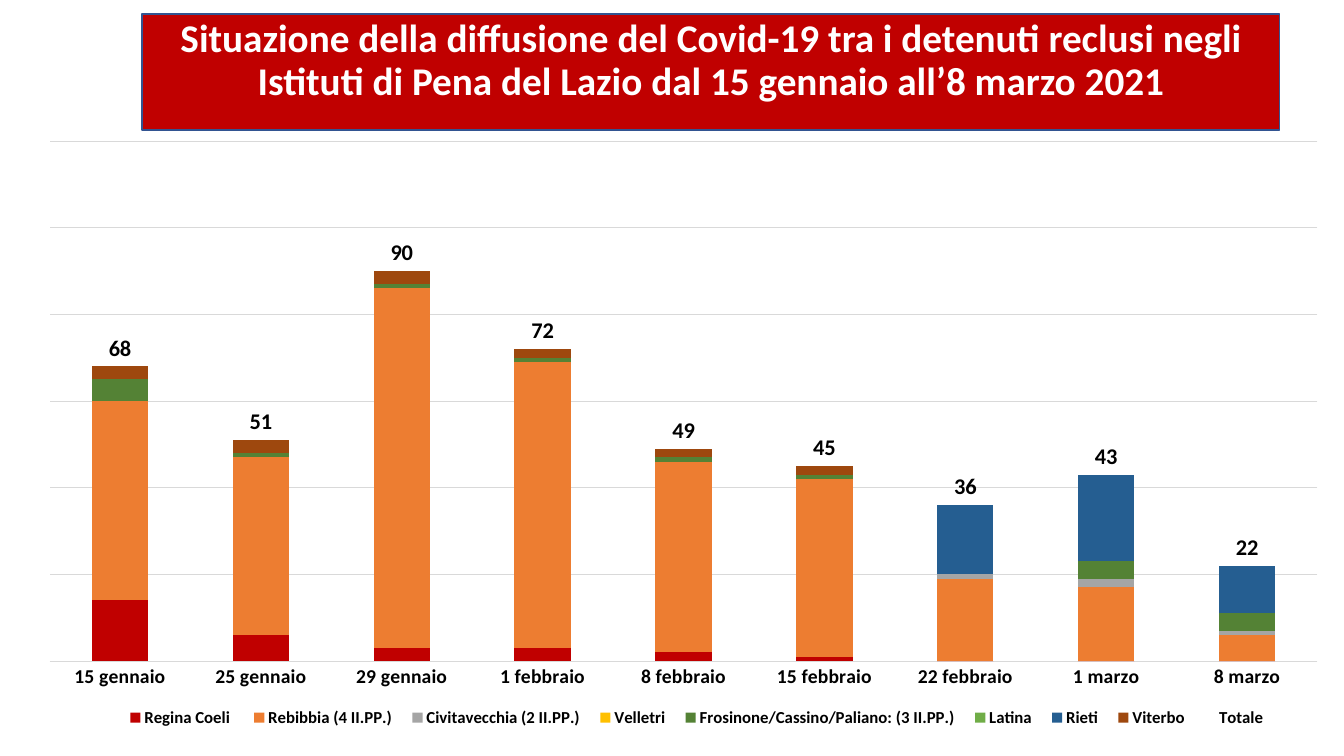
import pptx
import pptx.chart.data
import pptx.dml.color
import pptx.enum.chart
import pptx.enum.shapes
import pptx.enum.text
import pptx.oxml
import pptx.oxml.ns
import pptx.util

COLORS = {
    "banner": "C00000", "banner_line": "325491", "white": "FFFFFF",
    "text": "000000", "grid": "D9D9D9",
}
DATES = ["15 gennaio", "25 gennaio", "29 gennaio", "1 febbraio", "8 febbraio",
         "15 febbraio", "22 febbraio", "1 marzo", "8 marzo"]
PRISONS = [
    ("Regina Coeli ", "C00000", [14, 6, 3, 3, 2, 1, 0, 0, 0]),
    ("Rebibbia (4 II.PP.)", "ED7D31", [46, 41, 83, 66, 44, 41, 19, 17, 6]),
    ("Civitavecchia (2 II.PP.)", "A5A5A5", [0, 0, 0, 0, 0, 0, 1, 2, 1]),
    ("Velletri", "FFC000", [0] * len(DATES)),
    ("Frosinone/Cassino/Paliano: (3 II.PP.)", "548235", [5, 1, 1, 1, 1, 1, 0, 4, 4]),
    ("Latina", "70AD47", [0] * len(DATES)),
    ("Rieti", "255E91", [0, 0, 0, 0, 0, 0, 16, 20, 11]),
    ("Viterbo", "9E480E", [3, 3, 3, 2, 2, 2, 0, 0, 0]),
]


def rgb(hex_color):
    return pptx.dml.color.RGBColor.from_string(hex_color)


def set_font(font, size, color=COLORS["text"], bold=True):
    font.name = "Calibri"
    font.size = pptx.util.Pt(size)
    font.bold = bold
    font.color.rgb = rgb(color)


presentation = pptx.Presentation()
presentation.slide_width = pptx.util.Inches(13.33)
presentation.slide_height = pptx.util.Inches(7.5)
slide = presentation.slides.add_slide(presentation.slide_layouts[6])

# Title banner
banner = slide.shapes.add_shape(
    pptx.enum.shapes.MSO_SHAPE.RECTANGLE,
    *[pptx.util.Inches(length) for length in (1.41, 0.14, 11.28, 1.15)])
banner.shadow.inherit = False
banner.fill.solid()
banner.fill.fore_color.rgb = rgb(COLORS["banner"])
banner.line.color.rgb = rgb(COLORS["banner_line"])
banner.line.width = pptx.util.Pt(1)
banner.text_frame.word_wrap = True
banner.text_frame.vertical_anchor = pptx.enum.text.MSO_ANCHOR.TOP
paragraph = banner.text_frame.paragraphs[0]
paragraph.text = ("Situazione della diffusione del Covid-19 tra i detenuti reclusi negli "
                  "Istituti di Pena del Lazio dal 15 gennaio all’8 marzo 2021")
paragraph.alignment = pptx.enum.text.PP_ALIGN.CENTER
paragraph.line_spacing = 0.9
paragraph.space_before = pptx.util.Pt(10)
set_font(paragraph.runs[0].font, 28, COLORS["white"])

# Stacked columns, topped by an unfilled total that carries the labels
chart_data = pptx.chart.data.CategoryChartData()
chart_data.categories = DATES
for name, color, cases in PRISONS:
    chart_data.add_series(name, cases)
totals = [sum(day) for day in zip(*[cases for name, color, cases in PRISONS])]
chart_data.add_series("Totale", totals)

chart = slide.shapes.add_chart(
    pptx.enum.chart.XL_CHART_TYPE.COLUMN_STACKED,
    *[pptx.util.Inches(length) for length in (0.23, 1.28, 13.1, 6.02)],
    chart_data).chart
set_font(chart.font, 10, bold=False)
chart.has_title = False
chart.has_legend = True
chart.legend.position = pptx.enum.chart.XL_LEGEND_POSITION.BOTTOM
chart.legend.include_in_layout = False
set_font(chart.legend.font, 12)

plot = chart.plots[0]
plot.vary_by_categories = False
plot.gap_width = 150
plot.overlap = 100
for series, (name, color, cases) in zip(plot.series, PRISONS):
    series.format.fill.solid()
    series.format.fill.fore_color.rgb = rgb(color)

total_series = plot.series[len(PRISONS)]
total_series.format.fill.background()
total_series.format.line.fill.background()
labels = total_series.data_labels
labels.show_value = True
labels.position = pptx.enum.chart.XL_LABEL_POSITION.INSIDE_BASE
set_font(labels.font, 16)

# Axes
dates_axis = chart.category_axis
dates_axis.major_tick_mark = pptx.enum.chart.XL_TICK_MARK.NONE
set_font(dates_axis.tick_labels.font, 14)
cases_axis = chart.value_axis
cases_axis.minimum_scale = 0
cases_axis.maximum_scale = 120
cases_axis.major_unit = 20
cases_axis.has_major_gridlines = True
cases_axis.visible = False
for line in (dates_axis.format.line, cases_axis.major_gridlines.format.line):
    line.color.rgb = rgb(COLORS["grid"])
    line.width = pptx.util.Pt(0.75)

# Plot area and one-line legend, as shares of the chart
placements = [
    ("plotArea", 0, '<c:layoutTarget val="inner"/>',
     {"x": 0.02, "y": 0.02, "w": 0.96, "h": 0.857}),
    ("legend", 1, "", {"x": 0.07, "y": 0.94, "w": 0.88, "h": 0.06}),
]
for part, index, target, shares in placements:
    element = chart.element.find(".//" + pptx.oxml.ns.qn(f"c:{part}"))
    for layout in element.findall(pptx.oxml.ns.qn("c:layout")):
        element.remove(layout)
    sides = "".join(f'<c:{side} val="{share}"/>' for side, share in shares.items())
    element.insert(index, pptx.oxml.parse_xml(
        f'<c:layout {pptx.oxml.ns.nsdecls("c")}><c:manualLayout>{target}'
        f'<c:xMode val="edge"/><c:yMode val="edge"/>{sides}'
        f'</c:manualLayout></c:layout>'))

presentation.save("out.pptx")
